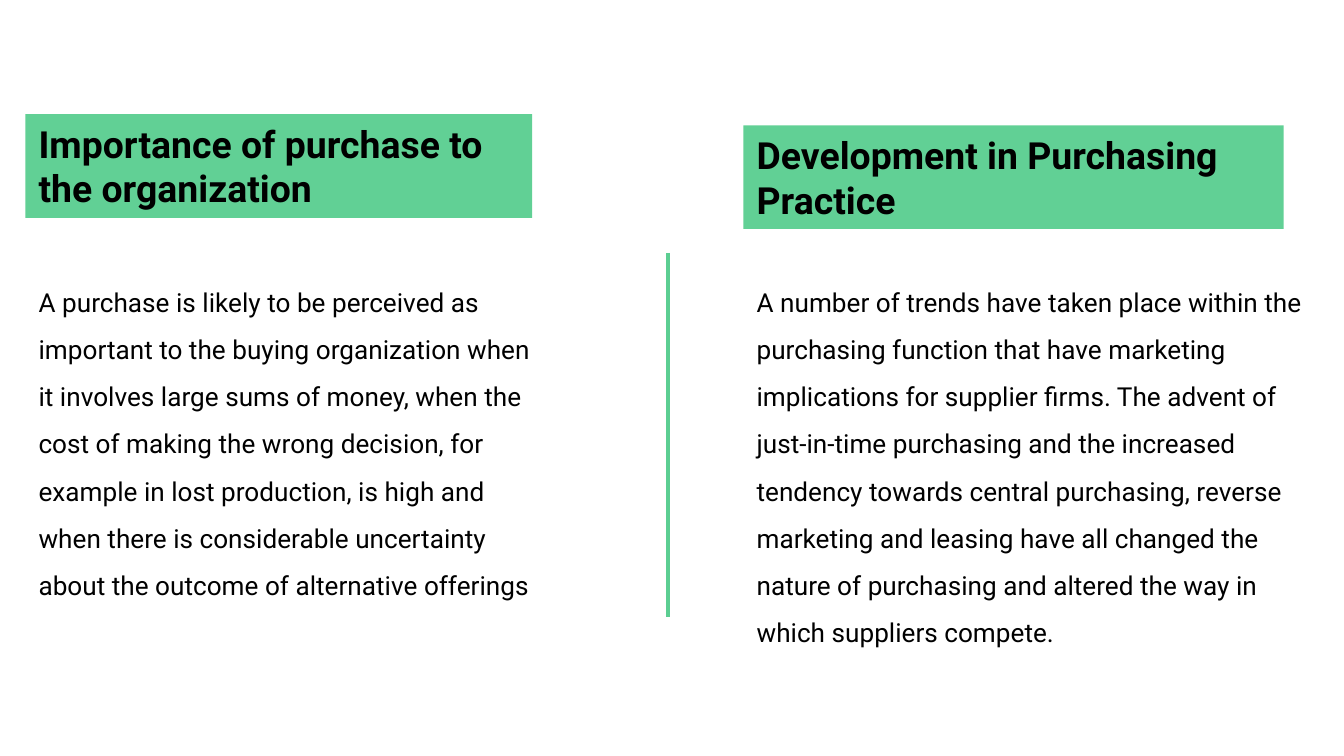
from lxml.etree import SubElement
from pptx import Presentation
from pptx.dml.color import RGBColor
from pptx.enum.shapes import MSO_CONNECTOR, MSO_SHAPE
from pptx.enum.text import MSO_ANCHOR, PP_ALIGN
from pptx.oxml.ns import qn
from pptx.util import Cm, Pt

BLACK = RGBColor(0x00, 0x00, 0x00)
GREEN = RGBColor(0x61, 0xD0, 0x95)
DIVIDER_GREEN = RGBColor(0x5C, 0xCE, 0x92)
FONT = "Roboto"
HEADING_HEIGHT = 1.96
BODY_TOP = 5

IMPORTANCE = (
    "A purchase is likely to be perceived as important to the buying "
    "organization when it involves large sums of money, when the cost of "
    "making the wrong decision, for example in lost production, is high and "
    "when there is considerable uncertainty about the outcome of alternative "
    "offerings"
)
DEVELOPMENT = (
    "A number of trends have taken place within the purchasing function that "
    "have marketing implications for supplier firms. The advent of "
    "just-in-time purchasing and the increased tendency towards central "
    "purchasing, reverse marketing and leasing have all changed the nature of "
    "purchasing and altered the way in which suppliers compete."
)


def write_text(box, text, size=14, bold=False, line_spacing=1.0):
    frame = box.text_frame
    frame.word_wrap = True
    frame.vertical_anchor = MSO_ANCHOR.TOP
    para = frame.paragraphs[0]
    para.alignment = PP_ALIGN.LEFT
    para.line_spacing = line_spacing
    span = para.add_run()
    span.text = text
    span.font.name = FONT
    span.font.size = Pt(size)
    span.font.bold = bold
    span.font.color.rgb = BLACK


def add_heading(page, text, left, top, width):
    box = page.shapes.add_shape(
        MSO_SHAPE.RECTANGLE, Cm(left), Cm(top), Cm(width), Cm(HEADING_HEIGHT)
    )
    box.shadow.inherit = False
    box.fill.solid()
    box.fill.fore_color.rgb = GREEN
    box.line.fill.background()
    write_text(box, text, size=20, bold=True)


def add_body(page, text, left, width, height):
    box = page.shapes.add_textbox(Cm(left), Cm(BODY_TOP), Cm(width), Cm(height))
    write_text(box, text, line_spacing=1.5)


def add_divider(page, x, top, bottom):
    line = page.shapes.add_connector(
        MSO_CONNECTOR.STRAIGHT, Cm(x), Cm(top), Cm(x), Cm(bottom)
    )
    line.line.color.rgb = DIVIDER_GREEN
    line.line.width = Pt(2.25)
    SubElement(line._element.spPr, qn("a:effectLst"))


def main():
    deck = Presentation()
    deck.slide_width = Cm(25.4)
    deck.slide_height = Cm(14.29)
    page = deck.slides.add_slide(deck.slide_layouts[6])

    left_column, right_column = 0.48, 14.05
    add_heading(page, "Importance of purchase to the organization",
                left_column, top=2.16, width=9.58)
    add_body(page, IMPORTANCE, left_column, width=9.8, height=6.45)
    add_heading(page, "Development in Purchasing Practice",
                right_column, top=2.37, width=10.21)
    add_body(page, DEVELOPMENT, right_column, width=10.87, height=7.34)
    add_divider(page, x=12.62, top=4.78, bottom=11.66)

    deck.save("out.pptx")


if __name__ == "__main__":
    main()
